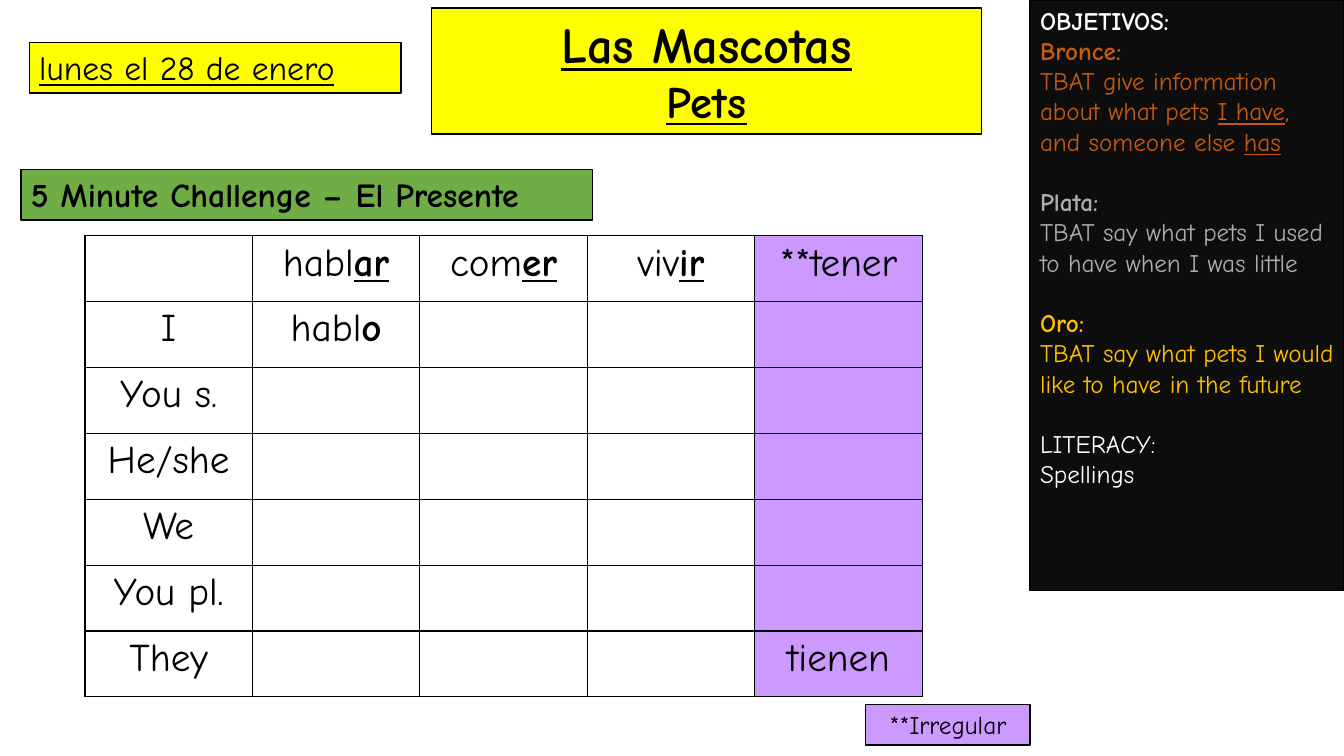
from pptx import Presentation
from pptx.util import Cm, Pt
from pptx.dml.color import RGBColor
from pptx.enum.shapes import MSO_SHAPE
from pptx.enum.text import PP_ALIGN, MSO_ANCHOR
from pptx.oxml import parse_xml
from pptx.oxml.ns import nsdecls

RECT = MSO_SHAPE.RECTANGLE
LEFT, MID = PP_ALIGN.LEFT, PP_ALIGN.CENTER
TOP = MSO_ANCHOR.TOP
FONT = "Comic Neue"
COLOURS = {
    "black": "000000", "white": "FFFFFF", "yellow": "FFFF00",
    "green": "70AD47", "lilac": "CC99FF", "panel": "0D0D0D",
    "bronze": "C55A11", "silver": "AFABAB", "gold": "FFC000",
}
RGB = {name: RGBColor.from_string(code) for name, code in COLOURS.items()}


def write(para, parts, size, colour="black", align=LEFT):
    """Add (text, style) parts; b in a style is bold, u is underlined."""
    para.alignment = align
    for text, style in parts:
        run = para.add_run()
        run.text = text
        font = run.font
        font.name, font.size = FONT, Pt(size)
        font.color.rgb = RGB[colour]
        font.bold, font.underline = "b" in style, "u" in style


def add_box(x, y, w, h, fill):
    box = slide.shapes.add_shape(RECT, Cm(x), Cm(y), Cm(w), Cm(h))
    box.shadow.inherit = False
    box.fill.solid()
    box.fill.fore_color.rgb = RGB[fill]
    box.line.color.rgb = RGB["black"]
    box.line.width = Pt(1)
    frame = box.text_frame
    frame.word_wrap = True
    frame.vertical_anchor = TOP
    return frame


prs = Presentation()
prs.slide_width, prs.slide_height = Cm(33.87), Cm(19.05)
slide = prs.slides.add_slide(prs.slide_layouts[6])

# Challenge heading, title and date
frame = add_box(0.53, 4.27, 14.4, 1.28, "green")
write(frame.paragraphs[0], [("5 Minute Challenge – El Presente", "b")], 24)

frame = add_box(10.87, 0.2, 13.87, 3.18, "yellow")
write(frame.paragraphs[0], [("Las Mascotas", "bu")], 36, align=MID)
write(frame.add_paragraph(), [("Pets", "bu")], 32, align=MID)

frame = add_box(0.74, 1.07, 9.37, 1.28, "yellow")
write(frame.paragraphs[0], [("lunes el 28 de enero", "u")], 24)

# Verb table
people = ["I", "You s.", "He/she", "We", "You pl.", "They"]
verbs = [("habl", "ar"), ("com", "er"), ("viv", "ir")]
texts = {(row, 0): [(who, "")] for row, who in enumerate(people, 1)}
for col, (stem, end) in enumerate(verbs, 1):
    texts[0, col] = [(stem, ""), (end, "bu")]
texts[0, 4] = [("**tener", "")]
texts[1, 1] = [("habl", ""), ("o", "b")]
texts[6, 4] = [("tienen", "")]

rows, cols = 7, 5
wide, high = 4.22, 1.66
table = slide.shapes.add_table(rows, cols, Cm(2.14), Cm(5.94),
                               Cm(cols * wide), Cm(rows * high)).table
table.first_row = table.horz_banding = False
for col in table.columns:
    col.width = Cm(wide)
for row in table.rows:
    row.height = Cm(high)

for r in range(rows):
    for c in range(cols):
        cell = table.cell(r, c)
        write(cell.text_frame.paragraphs[0], texts.get((r, c), []), 28, align=MID)
        cell.fill.solid()
        cell.fill.fore_color.rgb = RGB["lilac" if c == cols - 1 else "white"]
        # Borders go ahead of the fill
        props = cell._tc.get_or_add_tcPr()
        for i, side in enumerate(["lnL", "lnR", "lnT", "lnB"]):
            props.insert(i, parse_xml(
                f'<a:{side} {nsdecls("a")} w="12700"><a:solidFill>'
                f'<a:srgbClr val="{COLOURS["black"]}"/></a:solidFill></a:{side}>'))

# Objectives panel
goals = [
    ("OBJETIVOS:", "b", "white", []),
    ("Bronce:", "b", "bronze", [
        ("TBAT give information about what pets ", ""), ("I have", "u"),
        (", and someone else ", ""), ("has", "u")]),
    ("Plata:", "b", "silver", [
        ("TBAT say what pets I used to have when I was little", "")]),
    ("Oro:", "b", "gold", [
        ("TBAT say what pets I would like to have in the future", "")]),
    ("LITERACY:", "", "white", [("Spellings", "")]),
]
frame = add_box(25.96, 0, 7.91, 14.88, "panel")
for i, (head, style, colour, body) in enumerate(goals):
    para = frame.add_paragraph() if i else frame.paragraphs[0]
    write(para, [(head, style)], 18, colour)
    if i > 1:
        para.space_before = Pt(21.6)
    if body:
        write(frame.add_paragraph(), body, 18, colour)

# Note under the table
frame = add_box(21.82, 17.75, 4.14, 1.02, "lilac")
write(frame.paragraphs[0], [("**Irregular", "")], 18, align=MID)

prs.save("out.pptx")
